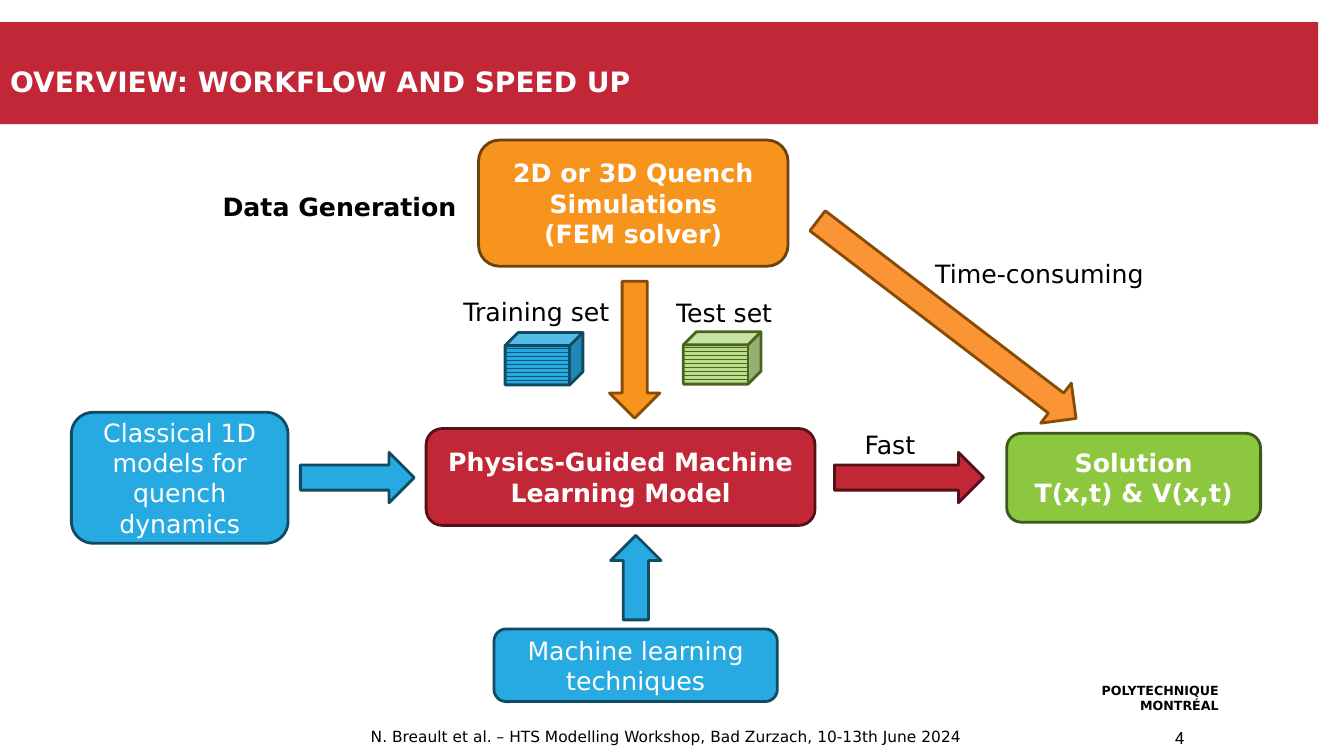
from dataclasses import dataclass

import lxml.etree
import pptx
import pptx.dml.color
import pptx.enum.shapes
import pptx.enum.text
import pptx.oxml.ns
import pptx.shapes.autoshape
import pptx.slide
import pptx.text.text
import pptx.util

Cm = pptx.util.Cm
Pt = pptx.util.Pt
SHAPE = pptx.enum.shapes.MSO_SHAPE
ALIGN = pptx.enum.text.PP_ALIGN
ANCHOR = pptx.enum.text.MSO_ANCHOR

COLOURS = {
    "white": "FFFFFF", "black": "000000",
    "red": "C12736", "dark red": "551118",
    "orange": "F7941E", "light orange": "FA9435",
    "brown": "6C410D", "dark orange": "864B05",
    "blue": "27AAE1", "dark blue": "114B63", "stripe blue": "105674",
    "green": "8DC63F", "dark green": "3E571C",
    "light green": "BBDD8C", "stripe green": "47651E",
}
STRIPE_COUNT = 9
STRIPE_START = 0.4
STRIPE_STEP = 0.1
STRIPE_LENGTH = 1.63


@dataclass
class Area:
    """Position and size in centimetres."""
    left: float
    top: float
    width: float
    height: float

    def lengths(self) -> list[pptx.util.Length]:
        return [Cm(value) for value in (self.left, self.top, self.width, self.height)]


@dataclass
class Step:
    text: str
    area: Area
    fill: str
    outline: str
    bold: bool = True


@dataclass
class Arrow:
    area: Area
    fill: str
    outline: str
    rotation: float = 0


@dataclass
class Label:
    text: str
    area: Area
    size: float = 18
    bold: bool = False
    alignment: ALIGN = ALIGN.LEFT
    font: str = "DejaVu Sans"


@dataclass
class DataSet:
    left: float
    top: float
    fill: str
    outline: str
    stripe: str


STEPS = [
    Step("2D or 3D Quench Simulations\n(FEM solver)", Area(12.06, 3.53, 7.8, 3.18), "orange", "brown"),
    Step("Classical 1D models for quench dynamics", Area(1.8, 10.39, 5.46, 3.3), "blue", "dark blue", False),
    Step("Machine learning techniques", Area(12.45, 15.85, 7.14, 1.83), "blue", "dark blue", False),
    Step("Solution\nT(x,t) & V(x,t)", Area(25.37, 10.92, 6.4, 2.24), "green", "dark green"),
    Step("Physics-Guided Machine Learning Model", Area(10.74, 10.8, 9.8, 2.44), "red", "dark red"),
]
ARROWS = [
    Arrow(Area(19.76, 7.42, 8.2, 1.27), "light orange", "dark orange", 37.4),
    Arrow(Area(14.27, 8.18, 3.45, 1.27), "orange", "dark orange", 90),
    Arrow(Area(14.96, 13.92, 2.13, 1.27), "blue", "dark blue", 270),
    Arrow(Area(7.57, 11.4, 2.87, 1.27), "blue", "dark blue"),
    Arrow(Area(21.03, 11.4, 3.76, 1.27), "red", "dark red"),
]
LABELS = [
    Label("Time-consuming", Area(23.32, 6.38, 5.87, 1.02)),
    Label("Data Generation", Area(5.36, 4.7, 6.76, 1.02), bold=True),
    Label("Training set", Area(11.43, 7.34, 4.27, 1.02)),
    Label("Test set", Area(16.79, 7.37, 3, 1.02)),
    Label("Fast", Area(21.54, 10.69, 3.76, 1.02)),
    Label("POLYTECHNIQUE\nMONTRÉAL", Area(24.76, 17.09, 6.2, 1.02), 9, True, ALIGN.RIGHT),
    Label("N. Breault et al. – HTS Modelling Workshop, Bad Zurzach, 10-13th June 2024",
          Area(4.8, 18.21, 23.98, 0.84), 11, alignment=ALIGN.CENTER),
    Label("4", Area(29.36, 18.21, 1.42, 0.84), 12, font="Roboto"),
]
DATA_SETS = [
    DataSet(12.73, 8.38, "blue", "dark blue", "stripe blue"),
    DataSet(17.22, 8.36, "light green", "stripe green", "stripe green"),
]


def colour(name: str) -> pptx.dml.color.RGBColor:
    return pptx.dml.color.RGBColor.from_string(COLOURS[name])


def write_text(frame: pptx.text.text.TextFrame, text: str, size: float, bold: bool,
               colour_name: str, alignment: ALIGN, font: str = "DejaVu Sans") -> None:
    frame.text = text
    frame.word_wrap = True
    for paragraph in frame.paragraphs:
        paragraph.alignment = alignment
        paragraph.font.name = font
        paragraph.font.size = Pt(size)
        paragraph.font.bold = bold
        paragraph.font.color.rgb = colour(colour_name)


def add_filled_shape(slide: pptx.slide.Slide, kind: SHAPE, area: Area, fill: str,
                     outline: str | None = None) -> pptx.shapes.autoshape.Shape:
    shape = slide.shapes.add_shape(kind, *area.lengths())
    shape.shadow.inherit = False
    shape.fill.solid()
    shape.fill.fore_color.rgb = colour(fill)
    if outline is None:
        shape.line.fill.background()
    else:
        shape.line.color.rgb = colour(outline)
        shape.line.width = Pt(2)
    return shape


def add_title(slide: pptx.slide.Slide) -> None:
    """Fill the title placeholder and lay the red band behind it."""
    band = add_filled_shape(slide, SHAPE.RECTANGLE, Area(0, 0.56, 33.22, 2.57), "red")
    title = slide.shapes.title
    title._element.addprevious(band._element)
    title.left, title.top, title.width, title.height = Area(0, 0.46, 22.86, 3.18).lengths()
    frame = title.text_frame
    frame.auto_size = pptx.enum.text.MSO_AUTO_SIZE.NONE
    frame.vertical_anchor = ANCHOR.MIDDLE
    write_text(frame, "OVERVIEW: WORKFLOW AND SPEED UP", 20, True, "white", ALIGN.LEFT)


def add_step(slide: pptx.slide.Slide, step: Step) -> None:
    shape = add_filled_shape(slide, SHAPE.ROUNDED_RECTANGLE, step.area, step.fill, step.outline)
    shape.text_frame.vertical_anchor = ANCHOR.MIDDLE
    write_text(shape.text_frame, step.text, 18, step.bold, "white", ALIGN.CENTER)


def add_arrow(slide: pptx.slide.Slide, arrow: Arrow) -> None:
    shape = add_filled_shape(slide, SHAPE.RIGHT_ARROW, arrow.area, arrow.fill, arrow.outline)
    shape.rotation = arrow.rotation


def add_label(slide: pptx.slide.Slide, label: Label) -> None:
    box = slide.shapes.add_textbox(*label.area.lengths())
    write_text(box.text_frame, label.text, label.size, label.bold, "black", label.alignment, label.font)


def add_data_set(slide: pptx.slide.Slide, data_set: DataSet) -> None:
    """Draw a cube with stripes across its front face."""
    area = Area(data_set.left, data_set.top, 1.96, 1.32)
    add_filled_shape(slide, SHAPE.CUBE, area, data_set.fill, data_set.outline)
    for index in range(STRIPE_COUNT):
        height = Cm(data_set.top + STRIPE_START + index * STRIPE_STEP)
        stripe = slide.shapes.add_connector(
            pptx.enum.shapes.MSO_CONNECTOR.STRAIGHT,
            Cm(data_set.left), height, Cm(data_set.left + STRIPE_LENGTH), height)
        stripe.line.color.rgb = colour(data_set.stripe)
        stripe.line.width = Pt(0.75)
        lxml.etree.SubElement(stripe._element.spPr, pptx.oxml.ns.qn("a:effectLst"))


def main() -> None:
    presentation = pptx.Presentation()
    presentation.slide_width = Cm(33.87)
    presentation.slide_height = Cm(19.05)
    slide = presentation.slides.add_slide(presentation.slide_layouts[5])
    add_title(slide)
    for step in STEPS:
        add_step(slide, step)
    for arrow in ARROWS:
        add_arrow(slide, arrow)
    for data_set in DATA_SETS:
        add_data_set(slide, data_set)
    for label in LABELS:
        add_label(slide, label)
    presentation.save("out.pptx")


if __name__ == "__main__":
    main()
